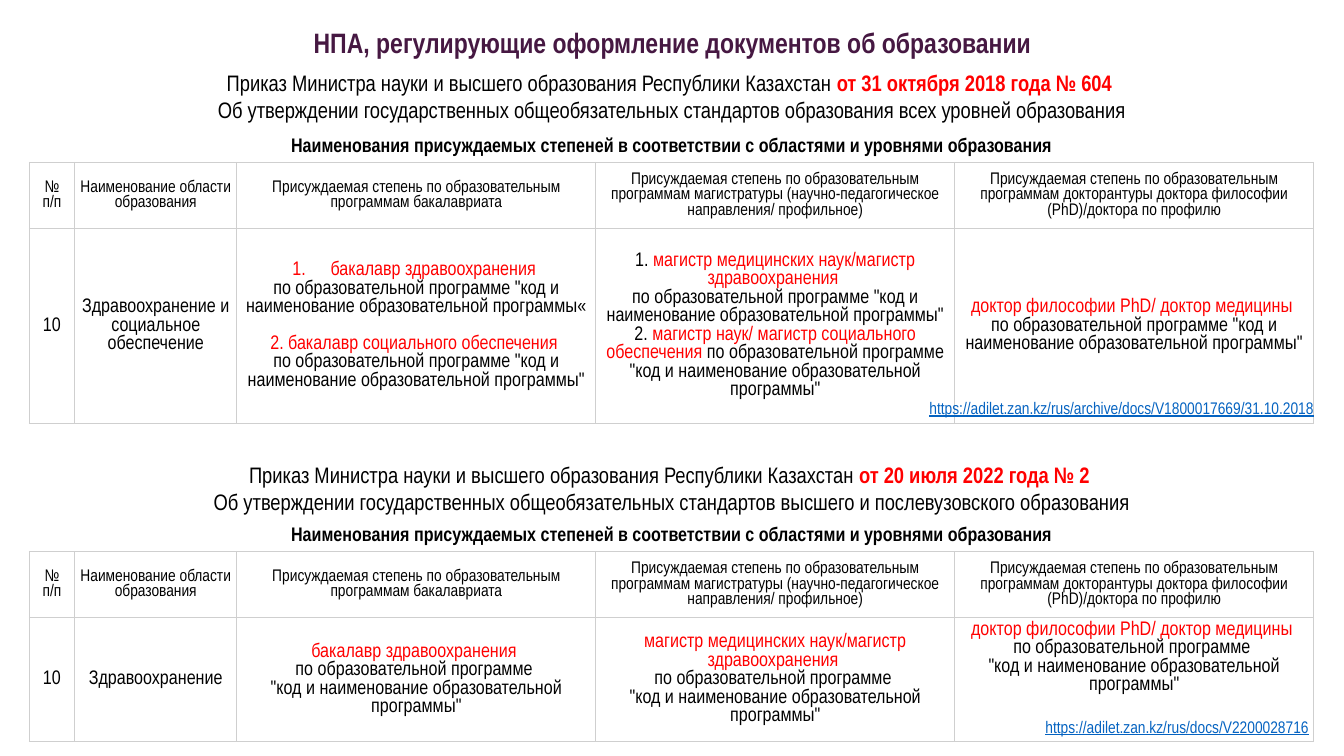
from lxml import etree
from pptx import Presentation
from pptx.dml.color import RGBColor
from pptx.enum.text import MSO_ANCHOR, PP_ALIGN
from pptx.oxml.ns import qn
from pptx.util import Pt

PX = 9144
FONT = "Arial Narrow"
CENTER, LEFT = PP_ALIGN.CENTER, PP_ALIGN.LEFT
MIDDLE, TOP = MSO_ANCHOR.MIDDLE, MSO_ANCHOR.TOP
BLACK = RGBColor(0x00, 0x00, 0x00)
RED = RGBColor(0xFF, 0x00, 0x00)
WHITE = RGBColor(0xFF, 0xFF, 0xFF)
PLUM = RGBColor(0x46, 0x18, 0x42)
LINK_BLUE = RGBColor(0x05, 0x63, 0xC1)
BORDER_GREY = "CFCFCF"

SLIDE_WIDTH, SLIDE_HEIGHT = 1333, 750
MARGIN = 29
COLUMN_WIDTHS = (45, 161, 356, 356, 356)
HEADER_HEIGHT = 66
CAPTION_HEIGHT = 34
LINK_HEIGHT, LINK_RIGHT = 30, 1316
BLANK_LINE = Pt(13)

TITLE = "НПА, регулирующие оформление документов об образовании"
ORDER = "Приказ Министра науки и высшего образования Республики Казахстан "
CAPTION = "Наименования присуждаемых степеней в соответствии с областями и уровнями образования"
HEADERS = (
    "№ п/п",
    "Наименование области образования",
    "Присуждаемая степень по образовательным программам бакалавриата",
    "Присуждаемая степень по образовательным программам магистратуры "
    "(научно-педагогическое направления/ профильное)",
    "Присуждаемая степень по образовательным программам докторантуры "
    "доктора философии (PhD)/доктора по профилю",
)
BY_PROGRAM = "по образовательной программе "
CODE_AND_NAME = '"код и наименование образовательной программы'
PROGRAM = BY_PROGRAM + CODE_AND_NAME
BACHELOR = "бакалавр здравоохранения "
MASTER = "магистр медицинских наук/магистр здравоохранения "
DOCTOR = "доктор философии PhD/ доктор медицины "


def plain(text):
    return [(text, BLACK)]


def red(text):
    return [(text, RED)]


def split_program(degree):
    return [red(degree), plain(BY_PROGRAM), plain(CODE_AND_NAME + '"')]


DEGREES_2018 = (
    [plain("10")],
    [plain("Здравоохранение и социальное обеспечение")],
    [
        red(BACHELOR),
        plain(PROGRAM + "«"),
        red("2. бакалавр социального обеспечения "),
        plain(PROGRAM + '"'),
    ],
    [
        plain("1. ") + red(MASTER),
        plain(PROGRAM + '"'),
        plain("2. ") + red("магистр наук/ магистр социального обеспечения ") + plain(PROGRAM + '"'),
    ],
    [red(DOCTOR), plain(PROGRAM + '"')],
)
DEGREES_2022 = (
    [plain("10")],
    [plain("Здравоохранение")],
    split_program(BACHELOR),
    split_program(MASTER),
    split_program(DOCTOR),
)


def write(frame, paragraphs, size, align=CENTER, bold=False):
    for index, runs in enumerate(paragraphs):
        paragraph = frame.paragraphs[0] if index == 0 else frame.add_paragraph()
        paragraph.alignment = align
        paragraph.font.name = FONT
        paragraph.font.size = Pt(size)
        paragraph.font.bold = bold
        for text, color in runs:
            run = paragraph.add_run()
            run.text = text
            run.font.color.rgb = color


def add_text(slide, box, paragraphs, size, **style):
    textbox = slide.shapes.add_textbox(*(length * PX for length in box))
    frame = textbox.text_frame
    frame.word_wrap = True
    write(frame, paragraphs, size, **style)
    return frame


def add_title(slide, box):
    title = slide.shapes.title
    title.left, title.top, title.width, title.height = (length * PX for length in box)
    title.text_frame.vertical_anchor = MIDDLE
    write(title.text_frame, [[(TITLE, PLUM)]], 20, bold=True)


def outline_cell(cell):
    properties = cell._tc.get_or_add_tcPr()
    for position, side in enumerate(("a:lnL", "a:lnR", "a:lnT", "a:lnB")):
        line = etree.Element(qn(side), w=str(Pt(0.75)))
        fill = etree.SubElement(line, qn("a:solidFill"))
        etree.SubElement(fill, qn("a:srgbClr"), val=BORDER_GREY)
        properties.insert(position, line)


def number_paragraph(paragraph):
    properties = paragraph._p.get_or_add_pPr()
    properties.set("marL", str(38 * PX))
    properties.set("indent", str(-38 * PX))
    etree.SubElement(properties, qn("a:buFont"), typeface="+mj-lt")
    numbering = etree.SubElement(properties, qn("a:buAutoNum"), type="arabicPeriod")
    run_defaults = properties.find(qn("a:defRPr"))
    if run_defaults is not None:
        numbering.addnext(run_defaults)


def add_degree_table(slide, box, degrees):
    left, top, width, height = (length * PX for length in box)
    table = slide.shapes.add_table(2, len(HEADERS), left, top, width, height).table
    table.first_row = table.horz_banding = False
    for column, column_width in zip(table.columns, COLUMN_WIDTHS):
        column.width = column_width * PX
    table.rows[0].height = HEADER_HEIGHT * PX
    table.rows[1].height = height - HEADER_HEIGHT * PX
    header_row = [[plain(header)] for header in HEADERS]
    for row, (contents, size) in enumerate(((header_row, 12), (degrees, 14))):
        for column, paragraphs in enumerate(contents):
            cell = table.cell(row, column)
            cell.margin_left = cell.margin_right = 5 * PX
            cell.margin_top = cell.margin_bottom = 3 * PX
            cell.vertical_anchor = MIDDLE
            cell.fill.solid()
            cell.fill.fore_color.rgb = WHITE
            outline_cell(cell)
            write(cell.text_frame, paragraphs, size)
    return table


def add_order(slide, box, date, subject, degrees, row_height, address, link_width):
    left, top, width, height = box
    bottom = top + height
    table_height = HEADER_HEIGHT + row_height
    table_top = bottom - table_height
    intro = add_text(slide, (left, top, width, 64), [plain(ORDER) + red(date), plain(subject)], 16)
    intro.paragraphs[0].runs[1].font.bold = True
    caption_box = (left, table_top - CAPTION_HEIGHT, width, CAPTION_HEIGHT)
    add_text(slide, caption_box, [plain(CAPTION)], 14, bold=True)
    table_box = (left + MARGIN, table_top, sum(COLUMN_WIDTHS), table_height)
    table = add_degree_table(slide, table_box, degrees)
    link_box = (left + LINK_RIGHT - link_width, bottom - LINK_HEIGHT, link_width, LINK_HEIGHT)
    link = add_text(slide, link_box, [[(address, LINK_BLUE)]], 12, align=LEFT)
    link.paragraphs[0].font.underline = True
    return table


def main():
    presentation = Presentation()
    presentation.slide_width = SLIDE_WIDTH * PX
    presentation.slide_height = SLIDE_HEIGHT * PX
    slide = presentation.slides.add_slide(presentation.slide_layouts[5])
    add_title(slide, (103, 20, 1128, 44))
    table_2018 = add_order(
        slide, (0, 64, SLIDE_WIDTH, 356),
        "от 31 октября 2018 года № 604 ",
        "Об утверждении государственных общеобязательных стандартов образования всех уровней образования",
        DEGREES_2018, 193,
        "https://adilet.zan.kz/rus/archive/docs/V1800017669/31.10.2018", 404,
    )
    bachelor_paragraphs = table_2018.cell(1, 2).text_frame.paragraphs
    number_paragraph(bachelor_paragraphs[0])
    bachelor_paragraphs[2].space_before = BLANK_LINE
    table_2022 = add_order(
        slide, (0, 453, SLIDE_WIDTH, 283),
        "от 20 июля 2022 года № 2 ",
        "Об утверждении государственных общеобязательных стандартов высшего и послевузовского образования",
        DEGREES_2022, 123,
        "https://adilet.zan.kz/rus/docs/V2200028716", 289,
    )
    table_2022.cell(1, 4).vertical_anchor = TOP
    presentation.save("out.pptx")


if __name__ == "__main__":
    main()
